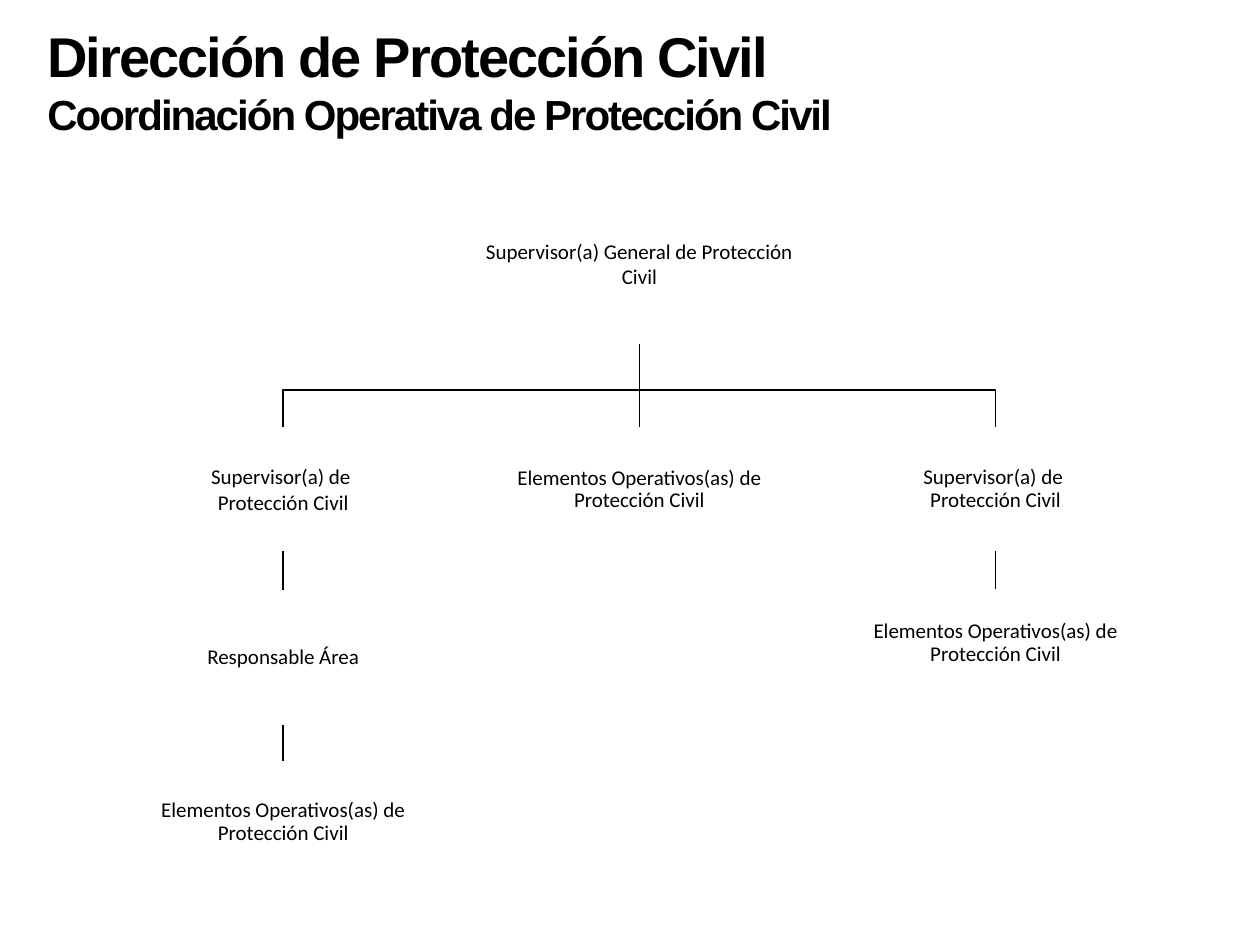
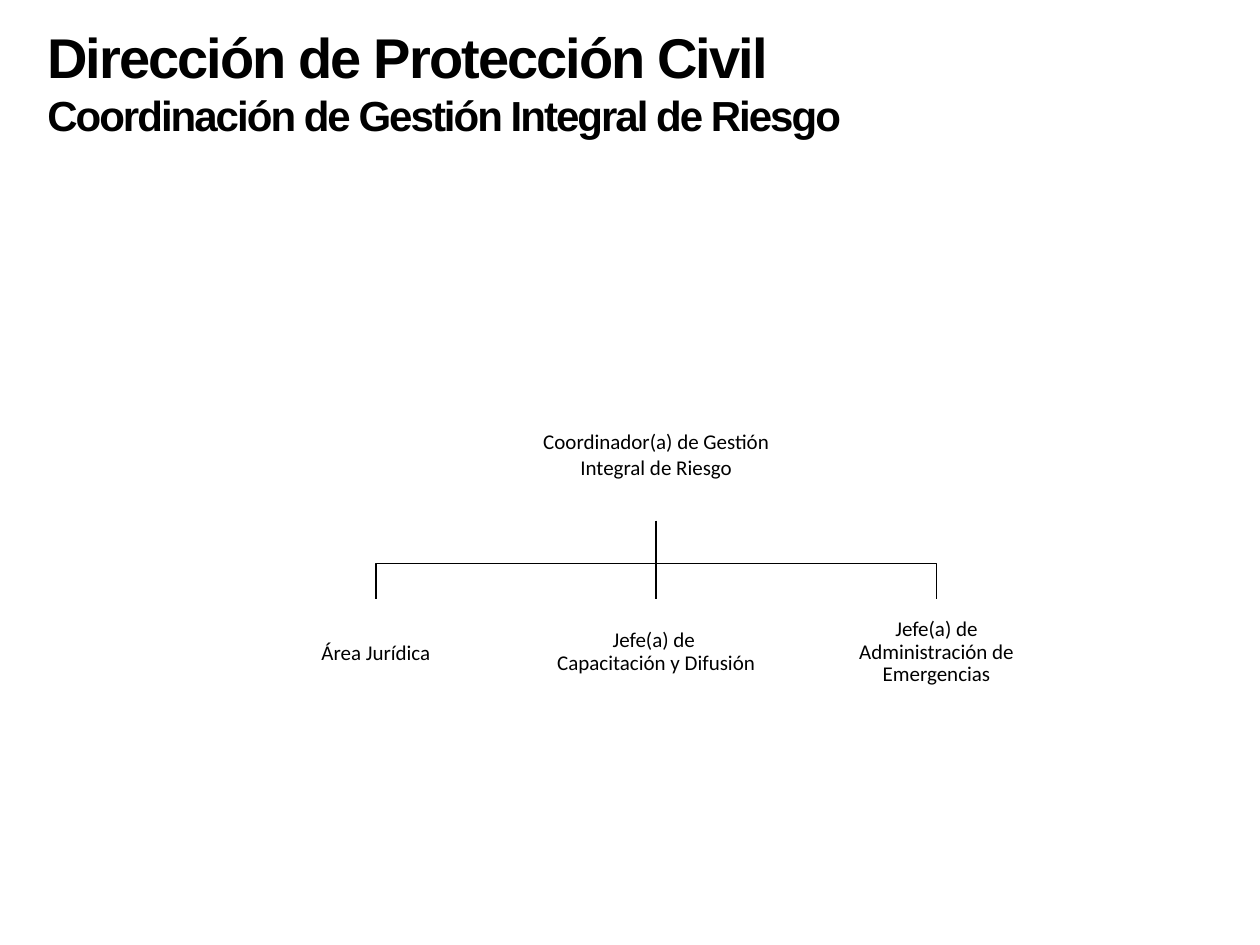
from pptx import Presentation
from pptx.dml.color import RGBColor
from pptx.enum.shapes import MSO_CONNECTOR, MSO_SHAPE
from pptx.enum.text import MSO_ANCHOR, MSO_AUTO_SIZE, PP_ALIGN
from pptx.oxml.ns import qn
from pptx.util import Cm, Pt
from lxml import etree

LINE = MSO_CONNECTOR.STRAIGHT
RECT = MSO_SHAPE.RECTANGLE
TOP, MIDDLE = MSO_ANCHOR.TOP, MSO_ANCHOR.MIDDLE
LEFT, CENTER = PP_ALIGN.LEFT, PP_ALIGN.CENTER
FIXED = MSO_AUTO_SIZE.NONE
BLACK, WHITE = "000000", "FFFFFF"
HEAD = "Dirección de Protección Civil"
CREW = "Elementos Operativos(as) de Protección Civil"
CHIEF = "Supervisor(a) de \vProtección Civil"
BOTTOM_SITE, TOP_SITE = 2, 0
INSET = 0.03
TIGHT = 0.9


def color(code):
    return RGBColor.from_string(code)


def style(para, face, size, align, bold=False):
    para.alignment = align
    font = para.font
    font.name = face
    font.size = Pt(size)
    font.bold = bold
    font.color.rgb = color(BLACK)


def add_title(slide, box, name):
    title = slide.shapes.title
    title.left, title.top, title.width, title.height = map(Cm, box)
    frame = title.text_frame
    frame.word_wrap = True
    frame.auto_size = FIXED
    frame.vertical_anchor = TOP
    frame.text = HEAD + "\n" + name
    for para, size in zip(frame.paragraphs, (32, 24)):
        style(para, "Arial", size, LEFT, True)
        for run in para.runs:
            run._r.get_or_add_rPr().set("spc", "-113")


def add_node(slide, mid, top, width, height, text, space=None, lift=0):
    node = slide.shapes.add_shape(
        RECT, Cm(mid - width / 2), Cm(top), Cm(width), Cm(height))
    node.shadow.inherit = False
    node.fill.solid()
    node.fill.fore_color.rgb = color(WHITE)
    node.line.fill.background()
    frame = node.text_frame
    frame.word_wrap = True
    frame.vertical_anchor = MIDDLE
    frame.margin_left = frame.margin_right = frame.margin_top = Cm(INSET)
    frame.margin_bottom = Cm(INSET + lift)
    frame.text = text
    para = frame.paragraphs[0]
    style(para, "Calibri", 12, CENTER)
    if space:
        para.line_spacing = space
    return node


def ink(shape):
    shape.line.color.rgb = color(BLACK)
    shape.line.width = Pt(1)


def link(slide, boss, kid):
    line = slide.shapes.add_connector(LINE, 0, 0, 0, 0)
    line.begin_connect(boss, BOTTOM_SITE)
    line.end_connect(kid, TOP_SITE)
    ink(line)
    etree.SubElement(line._element.spPr, qn("a:effectLst"))


def middle(node):
    return node.left + node.width // 2


def bend(slide, boss, kid):
    base = boss.top + boss.height
    bar = base + int((kid.top - base) * 0.55)
    start, end = middle(boss), middle(kid)
    pen = slide.shapes.build_freeform(start, base)
    pen.add_line_segments(
        ((start, bar), (end, bar), (end, kid.top)), close=False)
    elbow = pen.convert_to_shape()
    elbow.shadow.inherit = False
    elbow.fill.background()
    ink(elbow)


def fork(slide, boss, kids):
    first, center, last = kids
    bend(slide, boss, last)
    link(slide, boss, center)
    bend(slide, boss, first)


def add_field(slide, mid, top):
    pitch, width, lift = 7.18, 5.69, 0.49
    left, right = mid - pitch, mid + pitch
    boss = add_node(slide, mid, top, 6.93, 3.25,
                    "Supervisor(a) General de Protección Civil")
    row = top + 4.92
    west = add_node(slide, left, row, width, 2.5, CHIEF)
    crew = add_node(slide, mid, row, width, 3.02, CREW, TIGHT, lift)
    east = add_node(slide, right, row, width, 2.5, CHIEF, TIGHT)
    area = add_node(slide, left, top + 8.21, width, 2.72,
                    "Responsable Área", TIGHT)
    west_crew = add_node(slide, left, top + 11.66, width, 2.95,
                         CREW, TIGHT, lift)
    east_crew = add_node(slide, right, top + 8.18, width, 2.69,
                         CREW, TIGHT, lift)
    fork(slide, boss, (west, crew, east))
    for upper, lower in ((west, area), (area, west_crew), (east, east_crew)):
        link(slide, upper, lower)


def add_risk(slide, mid, top):
    pitch = 5.65
    boss = add_node(slide, mid, top, 5.41, 2.69,
                    "Coordinador(a) de Gestión Integral de Riesgo")
    jobs = (("Área Jurídica", None),
            ("Jefe(a) de \vCapacitación y Difusión", TIGHT),
            ("Jefe(a) de Administración de Emergencias", TIGHT))
    kids = [add_node(slide, mid + (i - 1) * pitch, top + 4.26, 4.29, 2.16,
                     text, space)
            for i, (text, space) in enumerate(jobs)]
    fork(slide, boss, kids)


def main():
    deck = Presentation()
    deck.slide_width, deck.slide_height = Cm(25.4), Cm(19.05)
    pages = (("Coordinación Operativa de Protección Civil", 0.3,
              add_field, 12.89, 3.69),
             ("Coordinación de Gestión Integral de Riesgo", 0.32,
              add_risk, 13.23, 7.81))
    for name, head, draw, mid, top in pages:
        slide = deck.slides.add_slide(deck.slide_layouts[5])
        add_title(slide, (0.7, head, 20.22, 2.64), name)
        draw(slide, mid, top)
    deck.save("out.pptx")


if __name__ == "__main__":
    main()
